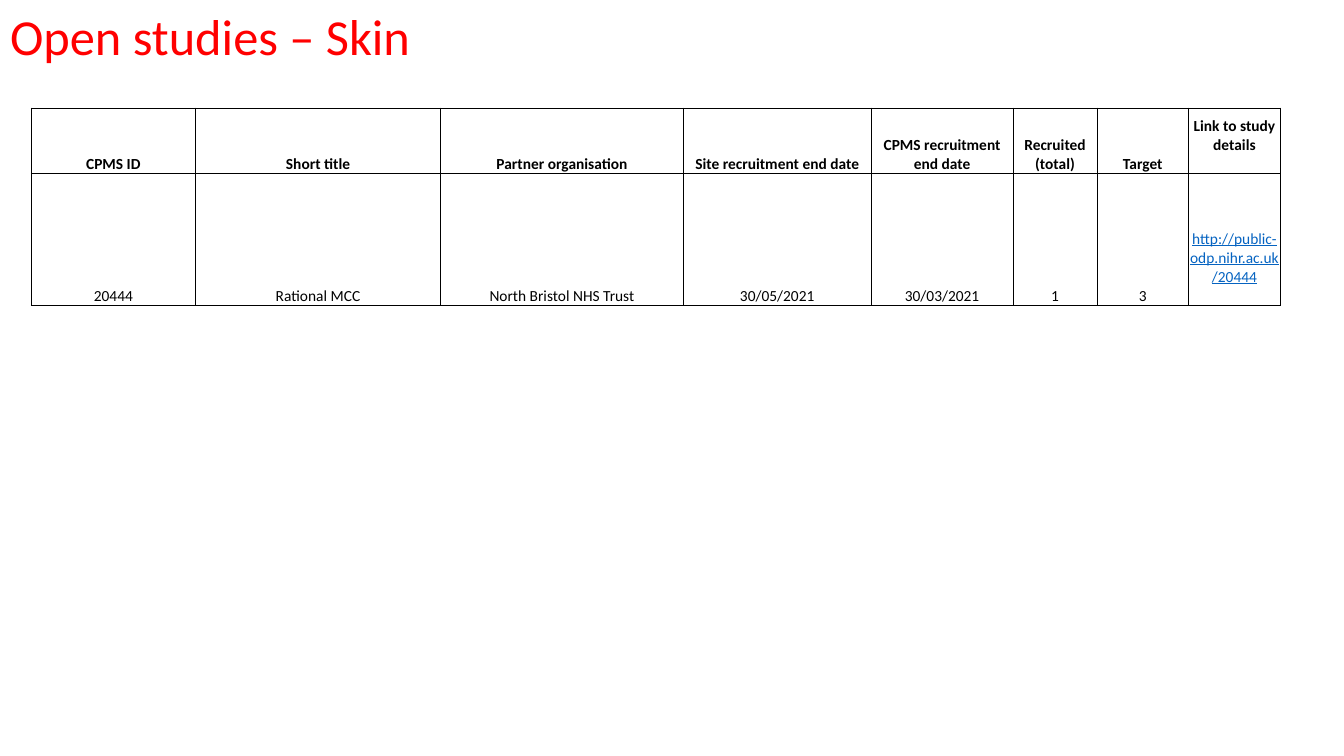
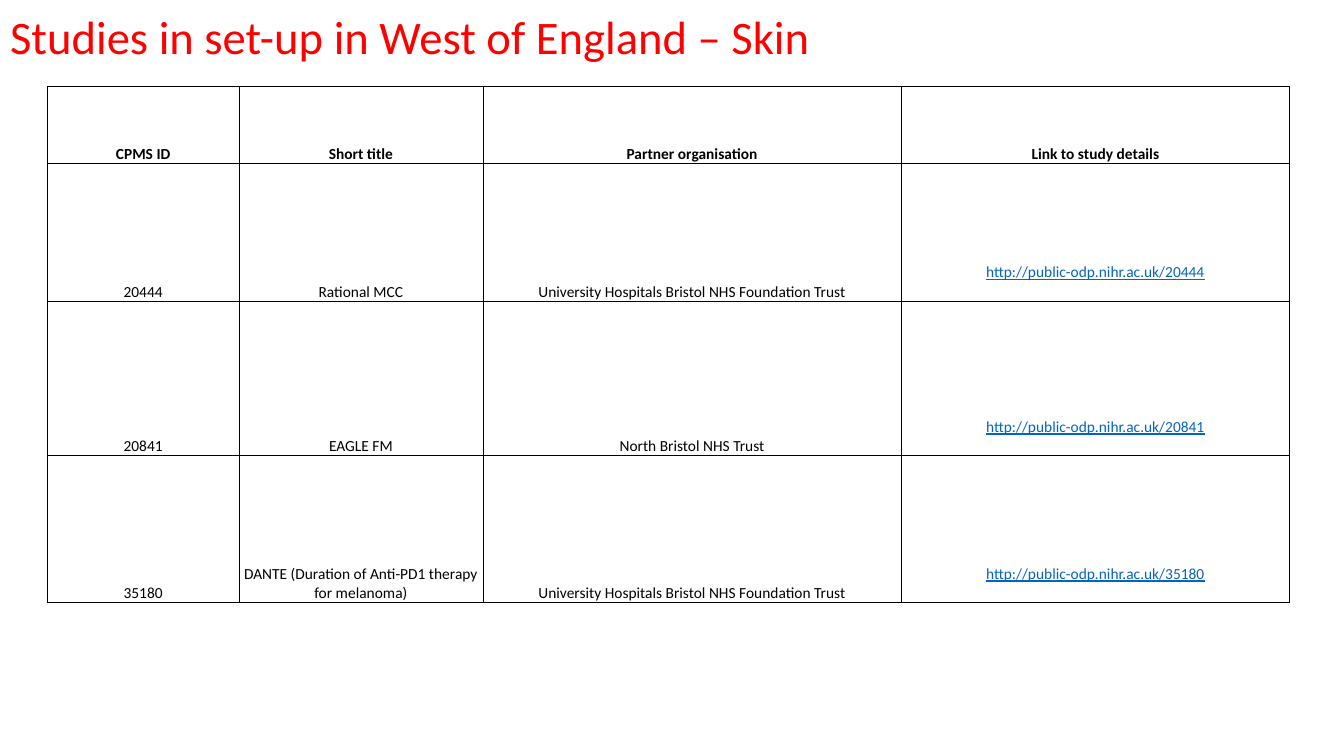
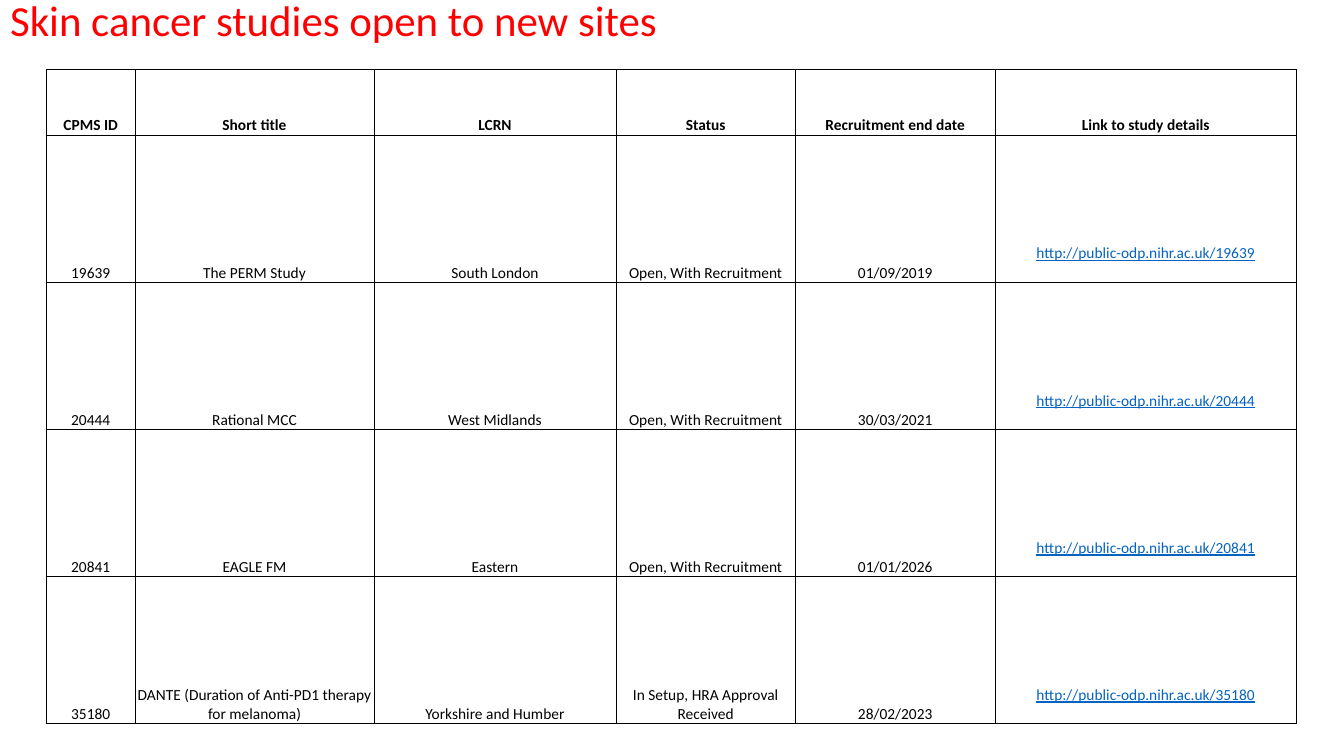
from lxml.etree import SubElement
from pptx import Presentation
from pptx.dml.color import RGBColor
from pptx.enum.text import MSO_ANCHOR, MSO_AUTO_SIZE, PP_ALIGN
from pptx.oxml.ns import qn
from pptx.util import Inches, Pt

RED = RGBColor(0xFF, 0x00, 0x00)
BLACK = RGBColor(0x00, 0x00, 0x00)
LINK_BLUE = RGBColor(0x05, 0x63, 0xC1)
FONT = "Calibri"
LINK_BASE = "http://public-odp.nihr.ac.uk/"
LINK_HEADER = "Link to study details"
DANTE = "DANTE (Duration of Anti-PD1 therapy for melanoma)"
UHB = "University Hospitals Bristol NHS Foundation Trust"
NBT = "North Bristol NHS Trust"
OPEN = "Open, With Recruitment"


def style_paragraph(p, size, color, align, bold=False, underline=False):
    p.alignment = align
    p.font.name = FONT
    p.font.size = Pt(size)
    p.font.bold = bold
    p.font.underline = underline
    p.font.color.rgb = color


def add_borders(cell):
    tcPr = cell._tc.get_or_add_tcPr()
    for side in ("lnL", "lnR", "lnT", "lnB"):
        ln = SubElement(tcPr, qn(f"a:{side}"), w=str(Pt(0.5)))
        fill = SubElement(ln, qn("a:solidFill"))
        SubElement(fill, qn("a:srgbClr"), val=str(BLACK))


slides = [
    {
        "title": "Open studies – Skin",
        "title_box": (8.64, 0.78), "title_size": 36, "spacing": 0.9,
        "table_at": (0.31, 1.07),
        "cols": [1.63, 2.43, 2.41, 1.86, 1.41, 0.83, 0.91, 0.91],
        "heights": [0.65, 1.31],
        "header": ["CPMS ID", "Short title", "Partner organisation",
                   "Site recruitment end date", "CPMS recruitment end date",
                   "Recruited (total)", "Target"],
        "header_raise": 0.19,
        "studies": [["20444", "Rational MCC", NBT, "30/05/2021", "30/03/2021", "1", "3"]],
    },
    {
        "title": "Studies in set-up in West of England – Skin",
        "title_box": (8.64, 0.78), "title_size": 33.3, "spacing": 0.9,
        "table_at": (0.47, 0.86),
        "cols": [1.9, 2.42, 4.15, 3.85],
        "heights": [0.76, 1.37, 1.53, 1.46],
        "header": ["CPMS ID", "Short title", "Partner organisation"],
        "header_raise": 0,
        "studies": [
            ["20444", "Rational MCC", UHB],
            ["20841", "EAGLE FM", NBT],
            ["35180", DANTE, UHB],
        ],
    },
    {
        "title": "Skin cancer studies open to new sites",
        "title_box": (8.25, 0.51), "title_size": 30.6, "spacing": 0.7,
        "table_at": (0.46, 0.69),
        "cols": [0.88, 2.37, 2.4, 1.78, 1.98, 2.99],
        "heights": [0.65] + [1.46] * 4,
        "header": ["CPMS ID", "Short title", "LCRN", "Status", "Recruitment end date"],
        "header_raise": 0,
        "studies": [
            ["19639", "The PERM Study", "South London", OPEN, "01/09/2019"],
            ["20444", "Rational MCC", "West Midlands", OPEN, "30/03/2021"],
            ["20841", "EAGLE FM", "Eastern", OPEN, "01/01/2026"],
            ["35180", DANTE, "Yorkshire and Humber",
             "In Setup, HRA Approval Received", "28/02/2023"],
        ],
    },
]

prs = Presentation()
prs.slide_width = Inches(13.33)
prs.slide_height = Inches(7.5)

for data in slides:
    s = prs.slides.add_slide(prs.slide_layouts[5])

    title = s.shapes.title
    title.left, title.top = Inches(0), Inches(0)
    title.width, title.height = [Inches(v) for v in data["title_box"]]
    tf = title.text_frame
    tf.text = data["title"]
    tf.word_wrap = True
    tf.auto_size = MSO_AUTO_SIZE.NONE
    tf.vertical_anchor = MSO_ANCHOR.MIDDLE
    p = tf.paragraphs[0]
    p.line_spacing = data["spacing"]
    style_paragraph(p, data["title_size"], RED, PP_ALIGN.LEFT)

    rows = [data["header"] + [LINK_HEADER]]
    rows += [study + [LINK_BASE + study[0]] for study in data["studies"]]
    left, top = data["table_at"]
    table = s.shapes.add_table(
        len(rows), len(data["cols"]), Inches(left), Inches(top),
        Inches(sum(data["cols"])), Inches(sum(data["heights"]))).table
    table.first_row = False
    table.horz_banding = False
    for col, width in zip(table.columns, data["cols"]):
        col.width = Inches(width)
    for row, height in zip(table.rows, data["heights"]):
        row.height = Inches(height)

    for i, texts in enumerate(rows):
        for j, text in enumerate(texts):
            is_header = i == 0
            is_last = j == len(texts) - 1
            is_link = is_last and not is_header
            cell = table.cell(i, j)
            cell.text = text
            cell.vertical_anchor = MSO_ANCHOR.BOTTOM
            cell.margin_left = cell.margin_right = cell.margin_top = Inches(0.01)
            cell.margin_bottom = Inches(0)
            if is_last:
                cell.margin_bottom = Inches(data["header_raise"] if is_header else 0.19)
            add_borders(cell)
            cell.fill.background()
            style_paragraph(cell.text_frame.paragraphs[0], 11,
                            LINK_BLUE if is_link else BLACK,
                            PP_ALIGN.CENTER, is_header, is_link)

prs.save("out.pptx")
